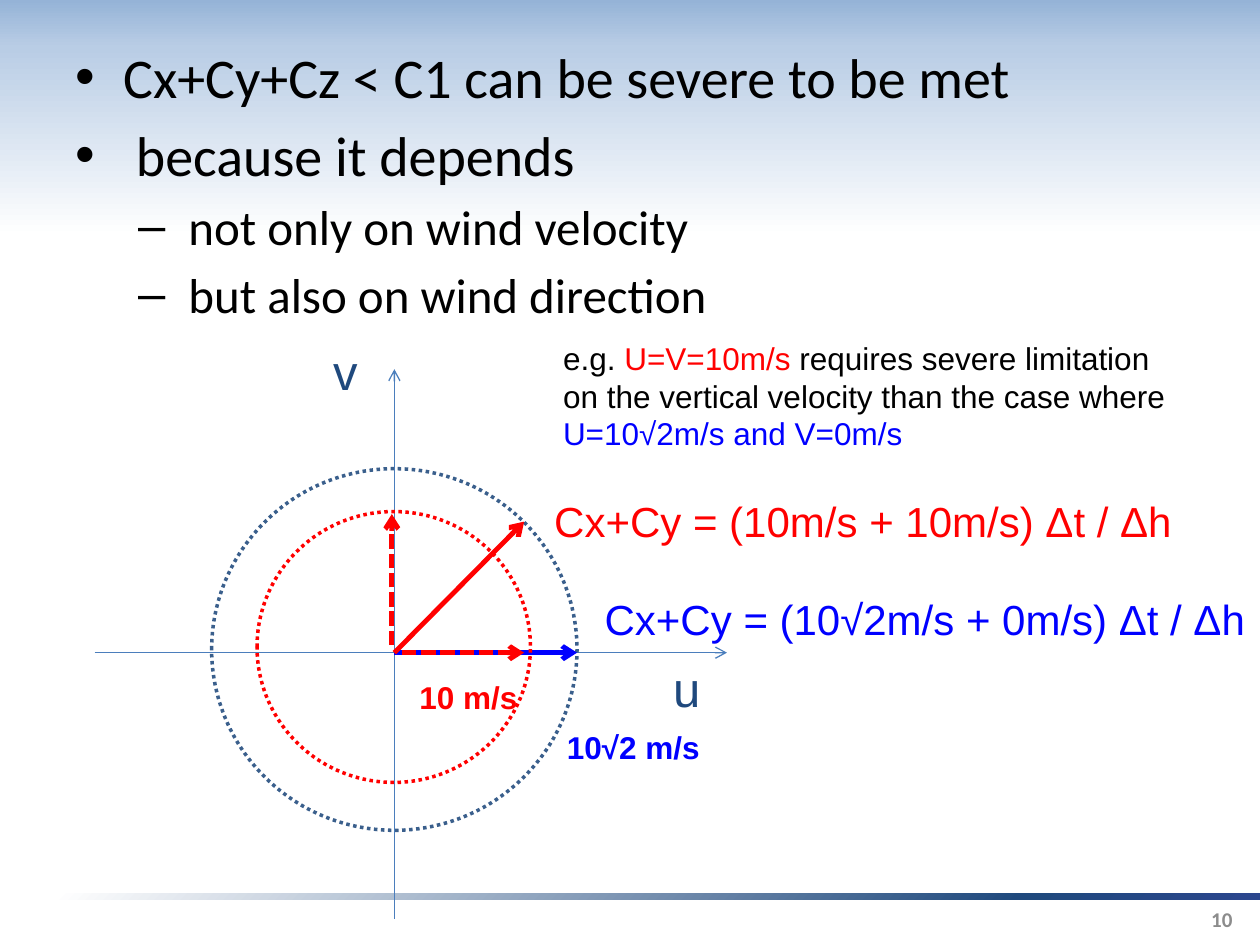
"""Build the slide on wind direction and the Courant limit."""
from lxml import etree
from pptx import Presentation
from pptx import util as u
from pptx.dml.color import RGBColor
from pptx.enum import dml, shapes, text
from pptx.oxml import ns

BLACK = RGBColor(0x00, 0x00, 0x00)
RED = RGBColor(0xFF, 0x00, 0x00)
BLUE = RGBColor(0x00, 0x00, 0xFF)
NAVY = RGBColor(0x1F, 0x49, 0x7D)
STEEL = RGBColor(0x4B, 0x7E, 0xBC)
SLATE = RGBColor(0x3A, 0x5F, 0x8C)
GREY = RGBColor(0x8C, 0x8C, 0x8C)
ROYAL = RGBColor(0x2B, 0x46, 0x8D)
SKY = RGBColor(0x95, 0xB3, 0xD7)
PALE = RGBColor(0xB9, 0xCD, 0xE5)
WHITE = RGBColor(0xFF, 0xFF, 0xFF)

DASH = dml.MSO_LINE.SQUARE_DOT
DOT = dml.MSO_LINE.ROUND_DOT


def node(root, tag, **attrs):
    return etree.SubElement(root, ns.qn(tag), attrs)


class Deck:
    def __init__(self):
        self.prs = Presentation()
        self.prs.slide_width, self.prs.slide_height = u.Inches(10), u.Inches(7.5)
        self.slide = self.prs.slides.add_slide(self.prs.slide_layouts[6])
        self.base = {"name": "Arial", "size": u.Pt(18), "bold": False}

    def fade(self, root, stops, radial=False):
        old = root.find(".//" + ns.qn("a:solidFill"))
        grad = etree.Element(ns.qn("a:gradFill"), rotWithShape="1")
        marks = node(grad, "a:gsLst")
        for at, color in stops:
            mark = node(marks, "a:gs", pos=str(at * 1000))
            node(mark, "a:srgbClr", val=str(color))
        if radial:
            ring = node(grad, "a:path", path="circle")
            node(ring, "a:fillToRect", l="100000", t="100000")
        else:
            node(grad, "a:lin", ang="5400000", scaled="0")
        old.getparent().replace(old, grad)

    def back(self, stops):
        self.slide.background.fill.solid()
        self.fade(self.slide.element, stops)

    def shape(self, kind, box):
        item = self.slide.shapes.add_shape(kind, *map(u.Inches, box))
        item.shadow.inherit = False
        return item

    def bar(self, box, stops):
        item = self.shape(shapes.MSO_SHAPE.RECTANGLE, box)
        item.line.fill.background()
        item.fill.solid()
        self.fade(item.element, stops, radial=True)

    def ring(self, box, color):
        item = self.shape(shapes.MSO_SHAPE.OVAL, box)
        item.fill.background()
        self.pen(item.line, color, 2, DOT)

    def pen(self, line, color, width, dash=None):
        line.color.rgb = color
        line.width = u.Pt(width)
        if dash:
            line.dash_style = dash

    def arrow(self, start, end, color, width=2.75, dash=None):
        item = self.slide.shapes.add_connector(
            shapes.MSO_CONNECTOR.STRAIGHT, *map(u.Inches, start + end))
        self.pen(item.line, color, width, dash)
        node(item.line._get_or_add_ln(), "a:tailEnd", type="arrow")
        node(item.element.spPr, "a:effectLst")

    def style(self, font, color, **form):
        for key, value in {**self.base, **form}.items():
            setattr(font, key, value)
        font.color.rgb = color

    def frame(self, box, wrap):
        frame = self.slide.shapes.add_textbox(*map(u.Inches, box)).text_frame
        frame.word_wrap = wrap
        return frame

    def label(self, box, runs, wrap=False, align=None, anchor=None, **form):
        frame = self.frame(box, wrap)
        frame.vertical_anchor = anchor
        para = frame.paragraphs[0]
        para.alignment = align
        for words, color in runs:
            run = para.add_run()
            run.text = words
            self.style(run.font, color, **form)

    def list(self, box, rows):
        frame = self.frame(box, True)
        forms = [("•", 0.38, 0.38, 32, 6), ("–", 0.81, 0.31, 28, 5)]
        for num, (level, words) in enumerate(rows):
            mark, left, hang, size, gap = forms[level]
            para = frame.add_paragraph() if num else frame.paragraphs[0]
            para.level = level
            para.space_before = u.Pt(gap if num else 0)
            props = para._p.get_or_add_pPr()
            props.set("marL", str(u.Inches(left)))
            props.set("indent", str(-u.Inches(hang)))
            node(props, "a:buFont", typeface="Arial")
            node(props, "a:buChar", char=mark)
            run = para.add_run()
            run.text = words
            self.style(run.font, BLACK, name="Calibri", size=u.Pt(size))


def main():
    deck = Deck()
    deck.back([(0, SKY), (5, PALE), (25, WHITE)])
    deck.bar((0.46, 7.09, 9.54, 0.05), [(0, ROYAL), (20, NAVY), (100, WHITE)])
    deck.list((0.5, 0.29, 9, 5.75), [
        (0, "Cx+Cy+Cz < C1 can be severe to be met"),
        (0, " because it depends"),
        (1, " not only on wind velocity"),
        (1, " but also on wind direction"),
    ])
    deck.label((9.17, 7.14, 0.71, 0.31), [("10", GREY)], wrap=True,
               align=text.PP_ALIGN.RIGHT, anchor=text.MSO_ANCHOR.MIDDLE,
               name="Calibri", size=u.Pt(12), bold=True)

    zero = (3.13, 5.18)
    deck.arrow((3.13, 7.29), (3.13, 2.93), STEEL, 0.75)
    deck.arrow((0.75, 5.18), (5.77, 5.18), STEEL, 0.75)
    deck.ring((1.68, 3.72, 2.9, 2.87), SLATE)
    deck.arrow(zero, (4.58, 5.18), BLUE)
    deck.arrow(zero, (4.16, 4.14), RED)
    deck.label((5.25, 5.18, 0.51, 0.69), [("u", NAVY)], size=u.Pt(28))
    deck.label((2.55, 2.66, 0.48, 0.69), [("v", NAVY)], size=u.Pt(28))
    deck.arrow((3.19, 5.18), (4.16, 5.18), RED, dash=DASH)
    deck.arrow((3.11, 5.12), (3.11, 4.08), RED, dash=DASH)
    deck.ring((2.04, 4.06, 2.17, 2.15), RED)

    deck.label((4.3, 3.88, 5.11, 0.5),
               [("Cx+Cy = (10m/s + 10m/s) Δt / Δh", RED)], size=u.Pt(24))
    deck.label((4.7, 4.66, 5.48, 0.5),
               [("Cx+Cy = (10√2m/s + 0m/s) Δt / Δh", BLUE)], size=u.Pt(24))
    deck.label((4.4, 5.73, 1.27, 0.4), [("10√2 m/s", BLUE)], bold=True)
    deck.label((3.23, 5.33, 0.99, 0.4), [("10 m/s", RED)], bold=True)
    deck.label((4.37, 2.64, 5.19, 1.01), [
        ("e.g. ", BLACK),
        ("U=V=10m/s", RED),
        (" requires severe limitation on the vertical velocity than the case where ", BLACK),
        ("U=10√2m/s and V=0m/s", BLUE),
    ], wrap=True)
    deck.prs.save("out.pptx")


if __name__ == "__main__":
    main()
